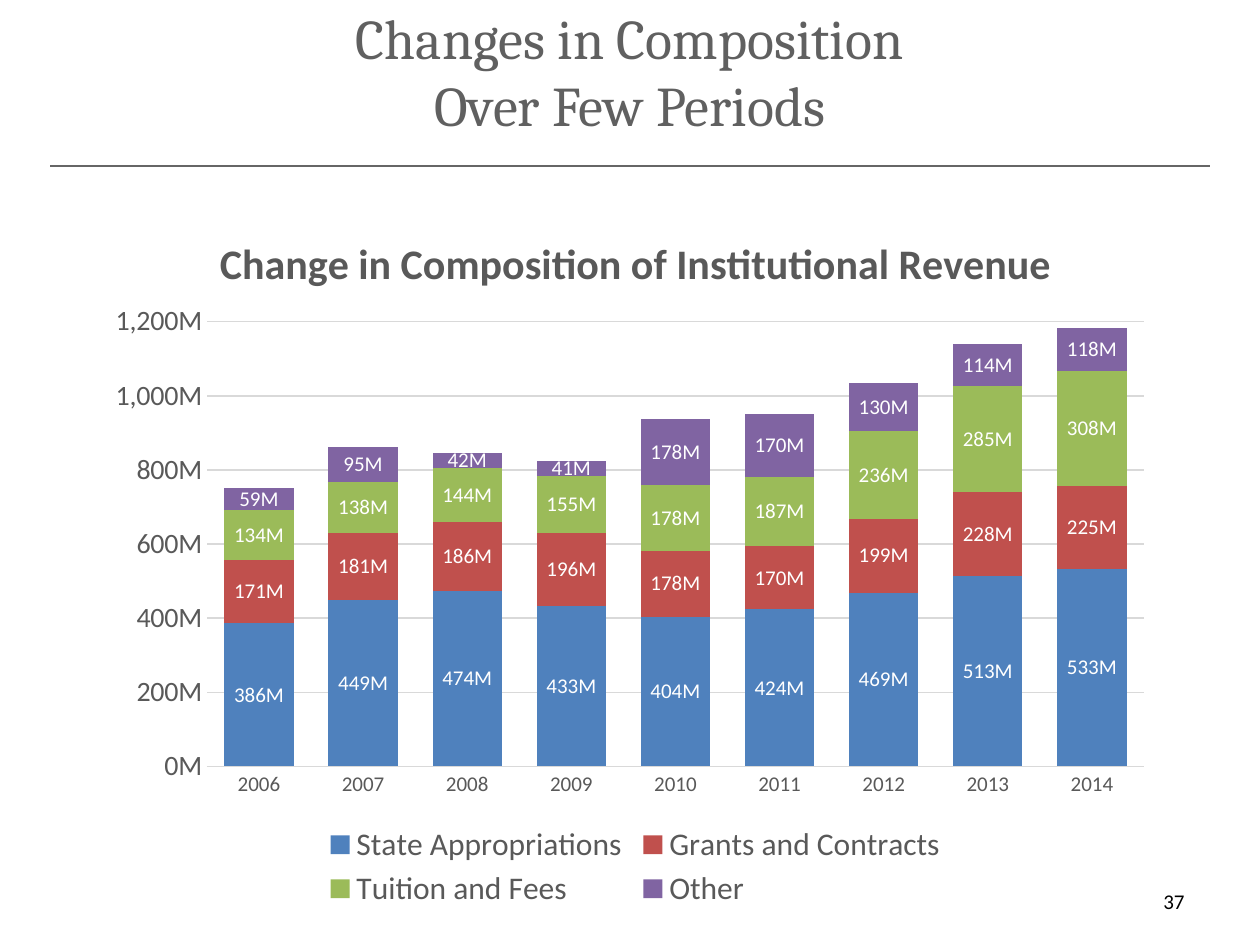
import pptx
import pptx.util
import pptx.chart.data
import pptx.dml.color
import pptx.enum.chart
import pptx.enum.shapes
import pptx.enum.text
import pptx.oxml
import pptx.oxml.ns

TITLE = "Changes in Composition\vOver Few Periods"
HEAD = "Change in Composition of Institutional Revenue"
PAGE = "37"
YEARS = [str(year) for year in range(2006, 2015)]
MILLION = 10 ** 6
# name, colour, values in millions
SERIES = [
    ("State Appropriations", "4F81BD", [386, 449, 474, 433, 404, 424, 469, 513, 533]),
    ("Grants and Contracts", "C0504D", [171, 181, 186, 196, 178, 170, 199, 228, 225]),
    ("Tuition and Fees", "9BBB59", [134, 138, 144, 155, 178, 187, 236, 285, 308]),
    ("Other", "8064A2", [59, 95, 42, 41, 178, 170, 130, 114, 118]),
]
FORMAT = '#,##0,,"M"'
GREY, PALE = "595959", "D9D9D9"
WIDE, HIGH = 10, 7.5
EDGE = 0.075  # side margin as a share of the width

ENUM = pptx.enum.chart
ALIGN = pptx.enum.text.PP_ALIGN
Pt = pptx.util.Pt


def rgb(code):
    return pptx.dml.color.RGBColor.from_string(code)


def box(left, top, width, height):
    """Turn shares of the slide into lengths."""
    shares = (left, WIDE), (top, HIGH), (width, WIDE), (height, HIGH)
    return [pptx.util.Inches(share * full) for share, full in shares]


def style(font, size, code, name="Calibri", bold=False):
    font.size, font.name, font.bold = Pt(size), name, bold
    font.color.rgb = rgb(code)


def rule(line, code, width=0.75):
    line.color.rgb, line.width = rgb(code), Pt(width)


def lay(parent, index, inner=False, **shares):
    """Place a chart part by shares of the chart's size."""
    for old in parent.findall(pptx.oxml.ns.qn("c:layout")):
        parent.remove(old)
    items = [("layoutTarget", "inner")] if inner else []
    items += [(key + "Mode", "edge") for key in ("x", "y")]
    items += shares.items()
    body = "".join(f'<c:{key} val="{value}"/>' for key, value in items)
    parent.insert(index, pptx.oxml.parse_xml(
        f'<c:layout {pptx.oxml.ns.nsdecls("c")}>'
        f"<c:manualLayout>{body}</c:manualLayout></c:layout>"))


def add_head(slide):
    title = slide.shapes.title
    title.left, title.top, title.width, title.height = box(EDGE, 0, 1 - 2 * EDGE, 0.15)
    frame = title.text_frame
    frame.text = TITLE
    frame.vertical_anchor = pptx.enum.text.MSO_ANCHOR.MIDDLE
    para = frame.paragraphs[0]
    para.alignment = ALIGN.CENTER
    style(para.font, 32, "606060", "Cambria")

    left, top, width, _ = box(0.04, 0.176, 0.92, 0)
    line = slide.shapes.add_connector(
        pptx.enum.shapes.MSO_CONNECTOR.STRAIGHT, left, top, left + width, top)
    rule(line.line, "666666", 1.06)
    line._element.spPr.append(pptx.oxml.parse_xml(
        f'<a:effectLst {pptx.oxml.ns.nsdecls("a")}/>'))


def add_page(slide):
    frame = slide.shapes.add_textbox(*box(0.717, 0.927, 0.233, 0.053)).text_frame
    frame.word_wrap = True
    frame.vertical_anchor = pptx.enum.text.MSO_ANCHOR.MIDDLE
    frame.text = PAGE
    para = frame.paragraphs[0]
    para.alignment = ALIGN.RIGHT
    style(para.font, 12, "000000")


def add_chart(slide):
    data = pptx.chart.data.CategoryChartData(number_format=FORMAT)
    data.categories = YEARS
    for name, _, values in SERIES:
        data.add_series(name, [value * MILLION for value in values])
    chart = slide.shapes.add_chart(
        ENUM.XL_CHART_TYPE.COLUMN_STACKED,
        *box(EDGE, 0.203, 1 - 2 * EDGE, 0.764), data).chart
    style(chart.font, 10, "000000")

    chart.has_title = True
    frame = chart.chart_title.text_frame
    frame.text = HEAD
    style(frame.paragraphs[0].font, 24, GREY, bold=True)
    chart.chart_title.include_in_layout = False
    lay(chart.chart_title._element, 1, x=0.11, y=0.05)

    chart.has_legend = True
    legend = chart.legend
    legend.position = ENUM.XL_LEGEND_POSITION.BOTTOM
    legend.include_in_layout = False
    style(legend.font, 18, GREY)
    lay(legend._element, 1, x=0.21, y=0.87, w=0.59, h=0.13)

    years, money = chart.category_axis, chart.value_axis
    for axis, size in ((years, 12), (money, 16)):
        axis.major_tick_mark = axis.minor_tick_mark = ENUM.XL_TICK_MARK.NONE
        style(axis.tick_labels.font, size, GREY)
    rule(years.format.line, PALE)
    money.format.line.fill.background()
    money.minimum_scale, money.maximum_scale = 0, 1200 * MILLION
    money.major_unit = 200 * MILLION
    rule(money.major_gridlines.format.line, PALE)
    money.tick_labels.number_format = FORMAT
    money.tick_labels.number_format_is_linked = False

    plot = chart.plots[0]
    plot.gap_width, plot.overlap, plot.vary_by_categories = 50, 100, False
    for series, (_, code, _) in zip(plot.series, SERIES):
        series.format.fill.solid()
        series.format.fill.fore_color.rgb = rgb(code)
        labels = series.data_labels
        labels.show_value = True
        labels.number_format = FORMAT
        labels.number_format_is_linked = False
        labels.position = ENUM.XL_LABEL_POSITION.CENTER
        style(labels.font, 12, "FFFFFF")
    lay(plot._element.getparent(), 0, inner=True, x=0.105, y=0.18, w=0.875, h=0.616)


def main():
    deck = pptx.Presentation()
    _, _, deck.slide_width, deck.slide_height = box(0, 0, 1, 1)
    slide = deck.slides.add_slide(deck.slide_layouts.get_by_name("Title Only"))
    add_head(slide)
    add_page(slide)
    add_chart(slide)
    deck.save("out.pptx")


if __name__ == "__main__":
    main()
